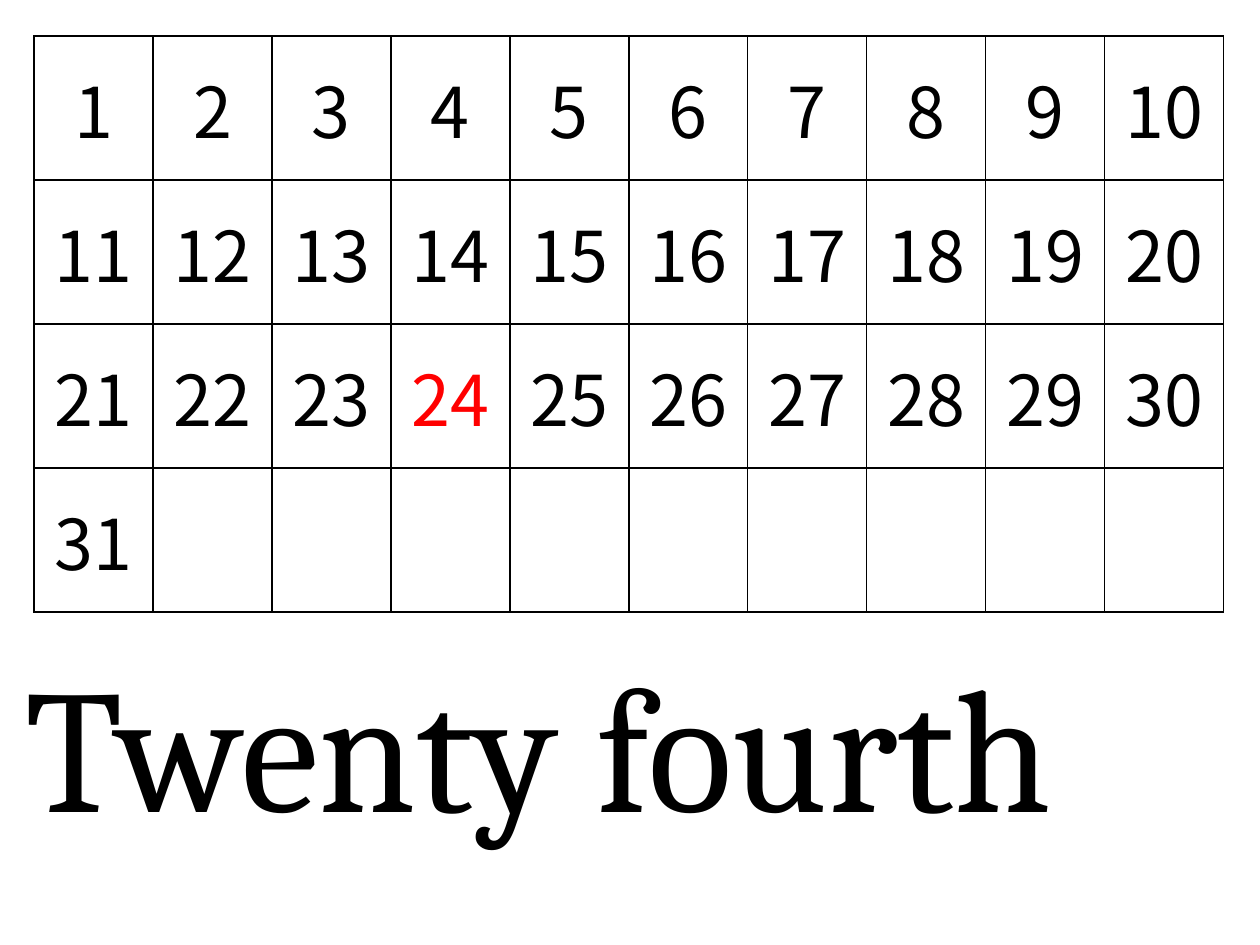
from dataclasses import dataclass

from lxml import etree
from pptx import Presentation
from pptx import util as u
from pptx.dml import color
from pptx.enum import text
from pptx.oxml import ns

EMU_PER_PX = 914400 / 126


@dataclass(frozen=True)
class Theme:
    ink: str = "000000"
    highlight: str = "FF0000"
    paper: str = "FFFFFF"
    day_font: str = "Noto Sans CJK JP"
    ordinal_font: str = "Cambria"
    day_size: int = 40
    ordinal_size: int = 100
    border_width: int = 1


@dataclass(frozen=True)
class Calendar:
    left: int
    top: int
    column_width: int
    row_height: int
    columns: int
    rows: int
    days: int
    marked_day: int


THEME = Theme()
CALENDAR = Calendar(34, 36, 119, 144, columns=10, rows=4, days=31, marked_day=24)


def px(length: int) -> u.Emu:
    return u.Emu(round(length * EMU_PER_PX))


def write(frame, words: str, *, font: str, size: int, ink: str = THEME.ink,
          align=text.PP_ALIGN.LEFT) -> None:
    para = frame.paragraphs[0]
    para.alignment = align
    span = para.add_run()
    span.text = words
    span.font.name = font
    span.font.size = u.Pt(size)
    span.font.color.rgb = color.RGBColor.from_string(ink)


def add_borders(cell) -> None:
    properties = cell._tc.get_or_add_tcPr()
    for position, side in enumerate(("lnL", "lnR", "lnT", "lnB")):
        line = etree.Element(ns.qn(f"a:{side}"), w=str(u.Pt(THEME.border_width)))
        fill = etree.SubElement(line, ns.qn("a:solidFill"))
        etree.SubElement(fill, ns.qn("a:srgbClr"), val=THEME.ink)
        properties.insert(position, line)


def draw_calendar(page, calendar: Calendar) -> None:
    table = page.shapes.add_table(
        calendar.rows, calendar.columns, px(calendar.left), px(calendar.top),
        px(calendar.column_width * calendar.columns),
        px(calendar.row_height * calendar.rows),
    ).table
    table.first_row = False
    table.horz_banding = False
    for column in table.columns:
        column.width = px(calendar.column_width)
    for row in table.rows:
        row.height = px(calendar.row_height)
    for day, cell in enumerate(table.iter_cells(), start=1):
        cell.fill.solid()
        cell.fill.fore_color.rgb = color.RGBColor.from_string(THEME.paper)
        cell.vertical_anchor = text.MSO_ANCHOR.MIDDLE
        add_borders(cell)
        if day <= calendar.days:
            ink = THEME.highlight if day == calendar.marked_day else THEME.ink
            write(cell.text_frame, str(day), font=THEME.day_font,
                  size=THEME.day_size, ink=ink, align=text.PP_ALIGN.CENTER)


def draw_ordinal(page, words: str) -> None:
    box = page.shapes.add_textbox(px(13), px(631), px(1200), px(224))
    frame = box.text_frame
    frame.word_wrap = False
    frame.auto_size = text.MSO_AUTO_SIZE.SHAPE_TO_FIT_TEXT
    write(frame, words, font=THEME.ordinal_font, size=THEME.ordinal_size)


def main() -> None:
    deck = Presentation()
    deck.slide_width, deck.slide_height = px(1260), px(945)
    page = deck.slides.add_slide(deck.slide_layouts.get_by_name("Blank"))
    draw_calendar(page, CALENDAR)
    draw_ordinal(page, "Twenty fourth")
    deck.save("out.pptx")


if __name__ == "__main__":
    main()
